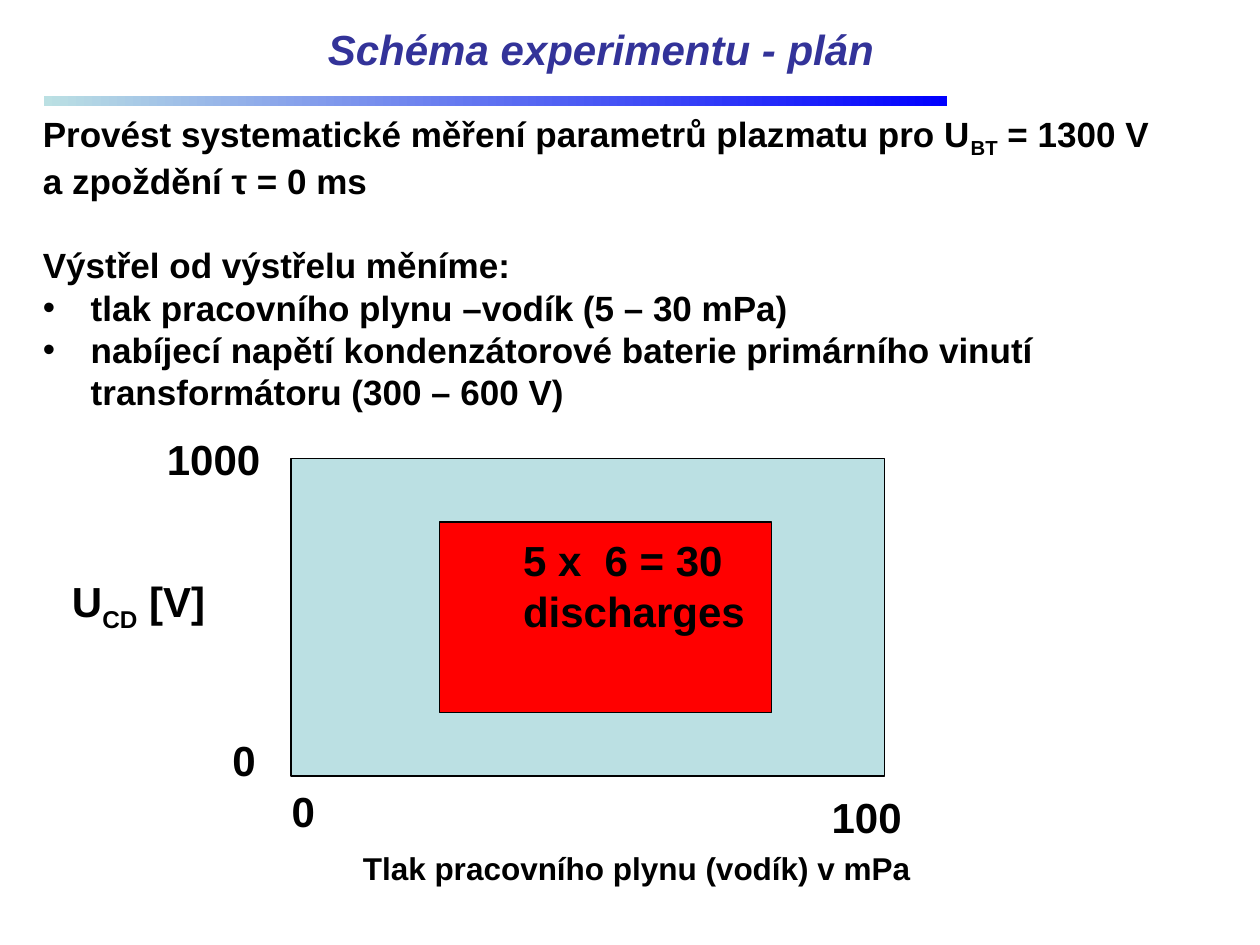
from collections import namedtuple

from lxml import etree
from pptx import Presentation, util as u
from pptx.dml.color import RGBColor
from pptx.enum import shapes, text
from pptx.oxml import ns

INDIGO = RGBColor(0x33, 0x33, 0x99)
PALE = RGBColor(0xBB, 0xE0, 0xE3)
BLUE = RGBColor(0x00, 0x00, 0xFF)
RED = RGBColor(0xFF, 0x00, 0x00)
BLACK = RGBColor(0x00, 0x00, 0x00)

CELL = u.Inches(0.25)  # grid of 40 columns by 30 rows
Box = namedtuple("Box", "left top width height")


def grid(*cells):
    return Box(*(int(cell * CELL) for cell in cells))


def inside(box, left, top, width, height):
    """Box given as shares of another box."""
    return Box(int(box.left + left * box.width), int(box.top + top * box.height),
               int(width * box.width), int(height * box.height))


def apply_format(target, values):
    for name, value in values.items():
        setattr(target, name, value)


def add_spans(para, spans, size, color=BLACK, italic=False):
    """Write (words, baseline) pairs; a negative baseline is a subscript."""
    for words, baseline in spans:
        span = para.add_run()
        span.text = words
        apply_format(span.font, {"name": "Arial", "size": u.Pt(size),
                                 "bold": True, "italic": italic})
        span.font.color.rgb = color
        if baseline:
            span.font._element.set("baseline", str(baseline * 1000))


def set_bullet(para, bullet):
    props = para._p.get_or_add_pPr()
    indent = u.Inches(0.38) if bullet else 0
    props.set("marL", str(indent))
    props.set("indent", str(-indent))
    if bullet:
        etree.SubElement(props, ns.qn("a:buFont")).set("typeface", "Arial")
        etree.SubElement(props, ns.qn("a:buChar")).set("char", "•")
    else:
        etree.SubElement(props, ns.qn("a:buNone"))


def prepare(holder, box, wrap):
    apply_format(holder, box._asdict())
    apply_format(holder.text_frame, {
        "word_wrap": wrap, "auto_size": text.MSO_AUTO_SIZE.NONE,
        "vertical_anchor": text.MSO_ANCHOR.TOP})
    return holder.text_frame


def add_rectangle(page, box, color=None):
    rectangle = page.shapes.add_shape(shapes.MSO_SHAPE.RECTANGLE, *box)
    rectangle.shadow.inherit = False
    if color is not None:
        rectangle.fill.solid()
        rectangle.fill.fore_color.rgb = color
        rectangle.line.color.rgb = BLACK
        rectangle.line.width = u.Pt(0.75)
    return rectangle


def add_label(page, box, spans, size=24):
    label = page.shapes.add_textbox(*box)
    frame = prepare(label, box, True)
    add_spans(frame.paragraphs[0], spans, size)


def add_heading(page, box, rule_box):
    # Title
    para = prepare(page.shapes.title, box, False).paragraphs[0]
    para.alignment = text.PP_ALIGN.CENTER
    add_spans(para, [("Schéma experimentu - plán", 0)], 24, INDIGO, True)
    # Gradient rule below it
    rule = add_rectangle(page, rule_box)
    rule.line.fill.background()
    rule.fill.gradient()
    rule.fill.gradient_angle = 0
    for stop, color in zip(rule.fill.gradient_stops, (PALE, BLUE)):
        stop.color.rgb = color


def add_plan(page, box):
    # (spans, bullet, points before)
    items = [
        ([("Provést systematické měření parametrů plazmatu pro U", 0), ("BT", -25),
          (" = 1300 V a zpoždění τ = 0 ms", 0)], False, 0),
        ([("Výstřel od výstřelu měníme:", 0)], False, 24),
        ([("tlak pracovního plynu –vodík (5 – 30 mPa)", 0)], True, 0),
        ([("nabíjecí napětí kondenzátorové baterie primárního vinutí "
           "transformátoru (300 – 600 V)", 0)], True, 0),
    ]
    frame = prepare(page.placeholders[1], box, True)
    for index, (spans, bullet, before) in enumerate(items):
        para = frame.add_paragraph() if index else frame.paragraphs[0]
        set_bullet(para, bullet)
        para.space_before = u.Pt(before)
        add_spans(para, spans, 20)


def add_diagram(page, box):
    # Full range and the measured region in it
    add_rectangle(page, box, PALE)
    add_rectangle(page, inside(box, 0.25, 0.2, 0.56, 0.6), RED)
    # Labels: left, top and width as shares of the full range
    labels = [
        (-0.23, -0.1, 0.23, [("1000", 0)], 24),
        (-0.39, 0.35, 0.34, [("U", 0), ("CD", -25), (" [V]", 0)], 24),
        (-0.12, 0.85, 0.07, [("0", 0)], 24),
        (-0.02, 1.01, 0.07, [("0", 0)], 24),
        (0.89, 1.03, 0.23, [("100", 0)], 24),
        (0.1, 1.21, 1.29, [("Tlak pracovního plynu (vodík) v mPa", 0)], 18),
        (0.37, 0.22, 0.52, [("5 x  6 = 30 discharges", 0)], 24),
    ]
    for left, top, width, spans, size in labels:
        add_label(page, inside(box, left, top, width, 0.2), spans, size)


def main():
    deck = Presentation()
    deck.slide_width, deck.slide_height = 40 * CELL, 30 * CELL
    page = deck.slides.add_slide(deck.slide_layouts[1])
    add_heading(page, grid(9.92, 0.56, 18.32, 2.04), grid(1.4, 3.04, 28.68, 0.32))
    add_plan(page, grid(0.96, 3.36, 36.28, 9.84))
    add_diagram(page, grid(9.24, 14.56, 18.84, 10.08))
    deck.save("out.pptx")


if __name__ == "__main__":
    main()
